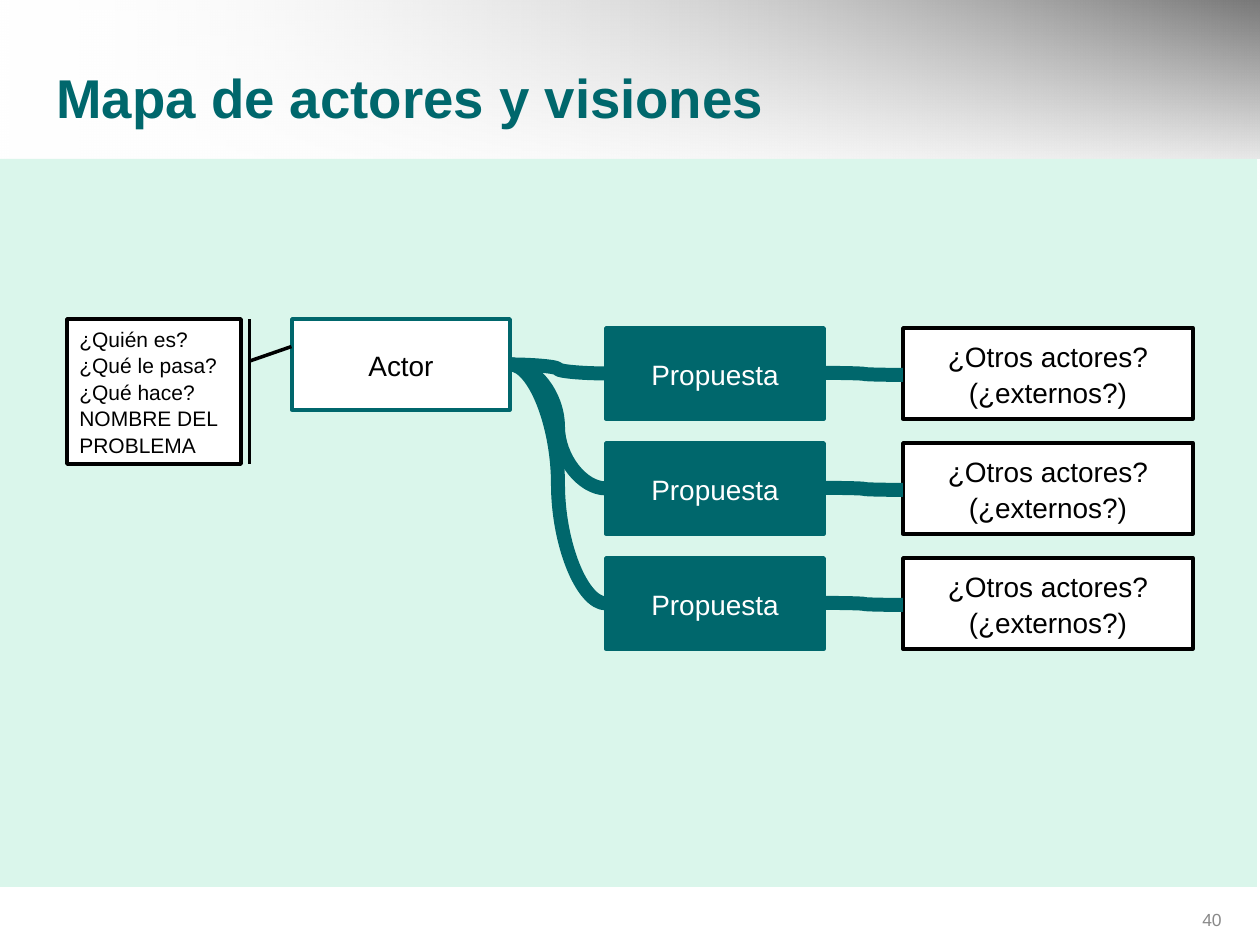
from dataclasses import dataclass
from lxml.etree import SubElement
from pptx import Presentation
from pptx.dml.color import RGBColor
from pptx.enum.shapes import MSO_CONNECTOR, MSO_SHAPE
from pptx.enum.text import MSO_ANCHOR, PP_ALIGN
from pptx.oxml.ns import qn
from pptx.slide import Slide
from pptx.util import Emu, Pt

EMU_PER_PX = 914400 / 126

WHITE = RGBColor(0xFF, 0xFF, 0xFF)
BLACK = RGBColor(0x00, 0x00, 0x00)
TEAL = RGBColor(0x00, 0x67, 0x6C)
MINT = RGBColor(0xDA, 0xF6, 0xEB)
GRAY = RGBColor(0x89, 0x89, 0x89)


def px(*lengths):
    return [Emu(round(length * EMU_PER_PX)) for length in lengths]


def write_text(shape, text, size=16, color=BLACK, bold=False, align=PP_ALIGN.CENTER,
               anchor=MSO_ANCHOR.MIDDLE, font="Arial", spacing=1.05):
    frame = shape.text_frame
    frame.word_wrap = True
    frame.vertical_anchor = anchor
    frame.text = text
    for paragraph in frame.paragraphs:
        paragraph.alignment = align
        paragraph.line_spacing = spacing
        paragraph.font.name = font
        paragraph.font.size = Pt(size)
        paragraph.font.bold = bold
        paragraph.font.color.rgb = color


@dataclass
class SlideBuilder:
    slide: Slide
    border: int = 2
    link_width: int = 8

    def box(self, left, top, width, height, fill=None, line=None, kind=MSO_SHAPE.RECTANGLE):
        shape = self.slide.shapes.add_shape(kind, *px(left, top, width, height))
        shape.shadow.inherit = False
        if fill is not None:
            shape.fill.solid()
            shape.fill.fore_color.rgb = fill
        if line is None:
            shape.line.fill.background()
        else:
            shape.line.color.rgb = line
            shape.line.width = Pt(self.border)
        return shape

    def gradient_box(self, left, top, width, height, start, end, start_alpha, angle):
        shape = self.box(left, top, width, height)
        shape.fill.gradient()
        shape.fill.gradient_angle = angle
        stops = shape.fill.gradient_stops
        for stop, position, color in zip(stops, (0, 1), (start, end)):
            stop.position = position
            stop.color.rgb = color
        first_color = next(shape.element.iter(qn("a:gs"))).find(qn("a:srgbClr"))
        SubElement(first_color, qn("a:alpha"), val=str(start_alpha * 1000))
        return shape

    def label(self, left, top, width, height, text, **style):
        shape = self.slide.shapes.add_textbox(*px(left, top, width, height))
        write_text(shape, text, **style)
        return shape

    def link(self, start, end):
        connector = self.slide.shapes.add_connector(MSO_CONNECTOR.CURVE, *px(*start, *end))
        connector.line.color.rgb = TEAL
        connector.line.width = Pt(self.link_width)
        SubElement(connector.element.spPr, qn("a:effectLst"))
        return connector


def main():
    presentation = Presentation()
    presentation.slide_width, presentation.slide_height = px(1260, 945)
    slide = presentation.slides.add_slide(presentation.slide_layouts[6])
    builder = SlideBuilder(slide)

    # Header shading, page number and body panel
    builder.gradient_box(0, 0, 1260, 159, WHITE, BLACK, start_alpha=0, angle=0)
    builder.gradient_box(0, 0, 1260, 189, WHITE, WHITE, start_alpha=47, angle=270)
    builder.label(1155, 900, 79, 37, "40", size=10, color=GRAY, align=PP_ALIGN.RIGHT)
    builder.box(-3, 159, 1260, 728, fill=MINT)

    # Title
    builder.label(44, 55, 1181, 79, "Mapa de actores y visiones",
                  size=31.2, color=TEAL, bold=True, align=PP_ALIGN.LEFT)

    # Actor with its callout
    actor = builder.box(292, 319, 218, 91, fill=WHITE, line=TEAL)
    write_text(actor, "Actor")
    callout = builder.box(67, 319, 174, 145, fill=WHITE, line=BLACK,
                          kind=MSO_SHAPE.LINE_CALLOUT_1_BORDER_AND_ACCENT_BAR)
    for index, value in enumerate((0.29, 1.05, 0.19, 1.29)):
        callout.adjustments[index] = value
    write_text(callout, "¿Quién es?\n¿Qué le pasa?\n¿Qué hace?\nNOMBRE DEL PROBLEMA",
               size=12, align=PP_ALIGN.LEFT, anchor=MSO_ANCHOR.TOP)

    # One row per proposal, linked to the actor and to the other actors
    first_top, row_pitch, row_height = 328, 115, 91
    for row in range(3):
        top = first_top + row * row_pitch
        middle = top + row_height // 2
        proposal = builder.box(606, top, 218, row_height, fill=TEAL, line=TEAL)
        write_text(proposal, "Propuesta", color=WHITE)
        others = builder.box(903, top, 290, row_height, fill=WHITE, line=BLACK)
        write_text(others, "¿Otros actores?\n(¿externos?)")
        actor_link = builder.link((606, middle), (510, 364))
        actor_link.begin_connect(proposal, 1)
        actor_link.end_connect(actor, 3)
        builder.link((903, middle + 2), (825, middle))

    presentation.save("out.pptx")


if __name__ == "__main__":
    main()
